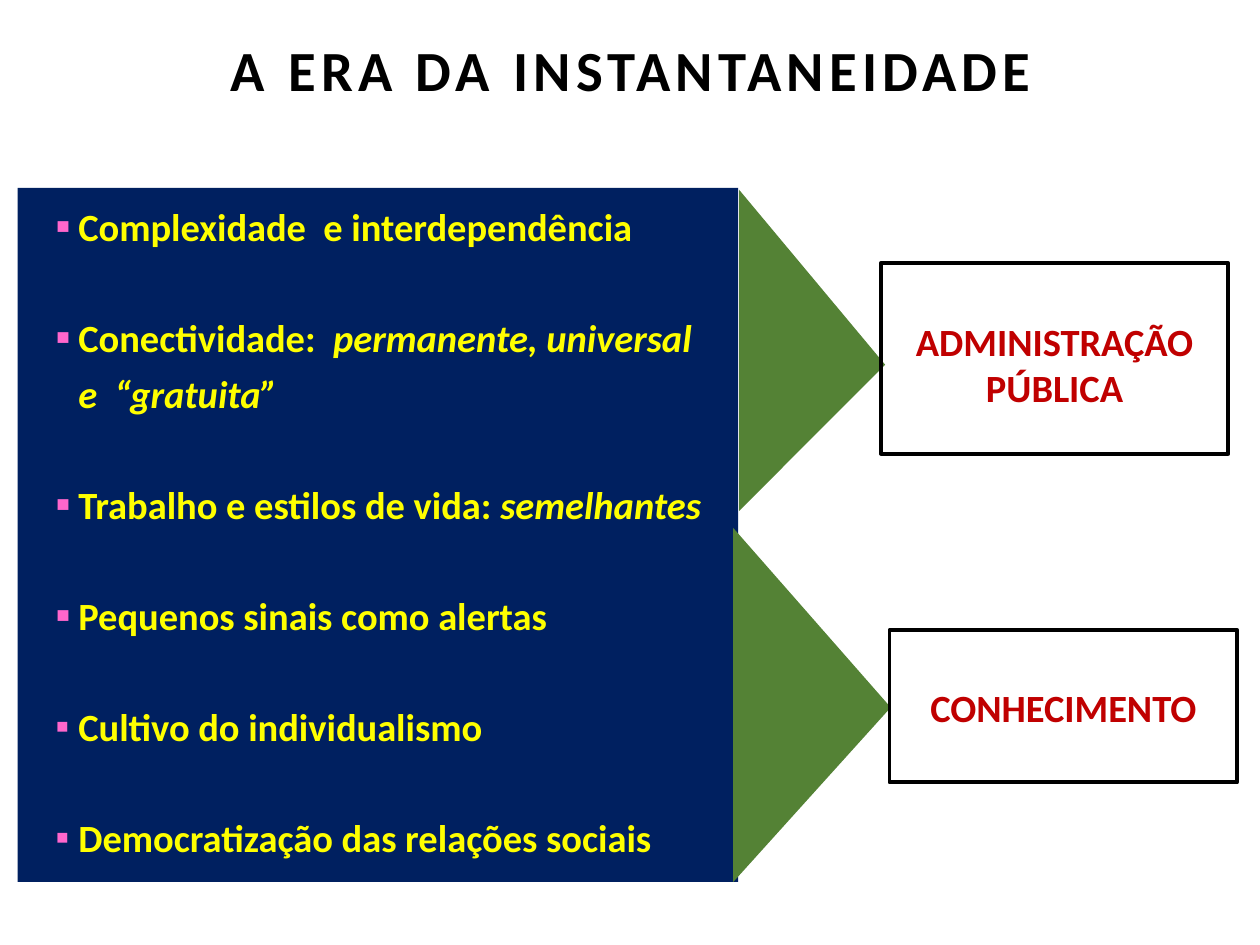
"""Build the slide on the age of instantaneity."""
from lxml.etree import SubElement
from pptx import Presentation
from pptx.dml.color import RGBColor
from pptx.enum.shapes import MSO_SHAPE
from pptx.enum.text import MSO_ANCHOR, MSO_AUTO_SIZE, PP_ALIGN
from pptx.oxml.ns import qn
from pptx.util import Pt

TITLE = "A ERA DA INSTANTANEIDADE"
TRENDS = [
    {"plain": "Complexidade  e interdependência", "bullet": 110},
    {"plain": "Conectividade:  ", "italic": "permanente, universal", "bullet": 110},
    {"italic": "e  “gratuita”"},
    {"plain": "Trabalho e estilos de vida: ", "italic": "semelhantes", "bullet": 110},
    {"plain": "Pequenos sinais como alertas", "bullet": 110},
    {"plain": "Cultivo do individualismo", "bullet": 100},
    {"plain": "Democratização das relações sociais", "bullet": 100},
]
EFFECTS = [
    {"label": "ADMINISTRAÇÃO PÚBLICA", "box": (503.3, 150.5, 198.7, 108.7),
     "arrow": (422.3, 108.4, 83.5, 183.6), "tip": 0.545, "inset": 10},
    {"label": "CONHECIMENTO", "box": (508.3, 360, 198.7, 87.1),
     "arrow": (419, 301.7, 90, 202.3), "tip": 0.507, "inset": 5},
]
TITLE_AREA = (10.1, 7.9, 701.3, 63.4)
TRENDS_AREA = (10.1, 107.3, 411.8, 396.7)
THEME = {
    "font": "Calibri", "title_size": 32.4, "text_size": 22,
    "title": "000000", "panel": "002060", "trend": "FFFF00",
    "bullet": "FF66CC", "arrow": "548235", "label": "C00000", "border": "000000",
}


def color(role):
    return RGBColor.from_string(THEME[role])


def format_run(run, role, size="text_size", italic=False):
    run.font.name = THEME["font"]
    run.font.size = Pt(THEME[size])
    run.font.bold = True
    run.font.italic = italic
    run.font.color.rgb = color(role)


def place(shape, area):
    shape.left, shape.top, shape.width, shape.height = map(Pt, area)


def add_bullet(paragraph, percent):
    properties = paragraph._p.get_or_add_pPr()
    properties.set("marL", str(Pt(27.5)))
    properties.set("indent", str(Pt(-13) if percent else 0))
    if not percent:
        SubElement(properties, qn("a:buNone"))
        return
    tint = SubElement(properties, qn("a:buClr"))
    SubElement(tint, qn("a:srgbClr"), val=THEME["bullet"])
    SubElement(properties, qn("a:buSzPct"), val=str(percent * 1000))
    SubElement(properties, qn("a:buFont"), typeface=THEME["font"])
    SubElement(properties, qn("a:buChar"), char="▪")


def add_title(slide):
    title = slide.shapes.title
    place(title, TITLE_AREA)
    frame = title.text_frame
    frame.text = TITLE
    frame.auto_size = MSO_AUTO_SIZE.NONE
    frame.vertical_anchor = MSO_ANCHOR.MIDDLE
    heading = frame.paragraphs[0]
    heading.alignment = PP_ALIGN.CENTER
    format_run(heading.runs[0], "title", "title_size")
    heading.runs[0].font._element.set("spc", "300")


def add_trends(slide):
    panel = slide.placeholders[1]
    place(panel, TRENDS_AREA)
    panel.fill.solid()
    panel.fill.fore_color.rgb = color("panel")
    frame = panel.text_frame
    frame.auto_size = MSO_AUTO_SIZE.NONE
    frame.vertical_anchor = MSO_ANCHOR.TOP
    for index, trend in enumerate(TRENDS):
        paragraph = frame.add_paragraph() if index else frame.paragraphs[0]
        bullet = trend.get("bullet")
        paragraph.line_spacing = 1.2
        paragraph.space_before = Pt(31.8 if index and bullet else 0)
        add_bullet(paragraph, bullet)
        for style in ("plain", "italic"):
            if style in trend:
                run = paragraph.add_run()
                run.text = trend[style]
                format_run(run, "trend", italic=style == "italic")


def add_arrow(slide, effect):
    left, top, width, height = effect["arrow"]
    shift = (width - height) / 2
    arrow = slide.shapes.add_shape(
        MSO_SHAPE.ISOSCELES_TRIANGLE,
        *map(Pt, (left + shift, top - shift, height, width)))
    arrow.rotation = 90
    arrow.adjustments[0] = effect["tip"]
    arrow.shadow.inherit = False
    arrow.fill.solid()
    arrow.fill.fore_color.rgb = color("arrow")
    arrow.line.fill.background()


def add_box(slide, effect):
    box = slide.shapes.add_shape(MSO_SHAPE.RECTANGLE, *map(Pt, effect["box"]))
    box.shadow.inherit = False
    box.fill.background()
    box.line.color.rgb = color("border")
    box.line.width = Pt(2.25)
    frame = box.text_frame
    frame.text = effect["label"]
    frame.word_wrap = True
    frame.vertical_anchor = MSO_ANCHOR.MIDDLE
    frame.margin_top = Pt(effect["inset"])
    label = frame.paragraphs[0]
    label.alignment = PP_ALIGN.CENTER
    format_run(label.runs[0], "label")


def main():
    deck = Presentation()
    deck.slide_width, deck.slide_height = Pt(720), Pt(540)
    slide = deck.slides.add_slide(deck.slide_layouts[1])
    add_title(slide)
    add_trends(slide)
    for effect in EFFECTS:
        add_arrow(slide, effect)
        add_box(slide, effect)
    deck.save("out.pptx")


if __name__ == "__main__":
    main()
